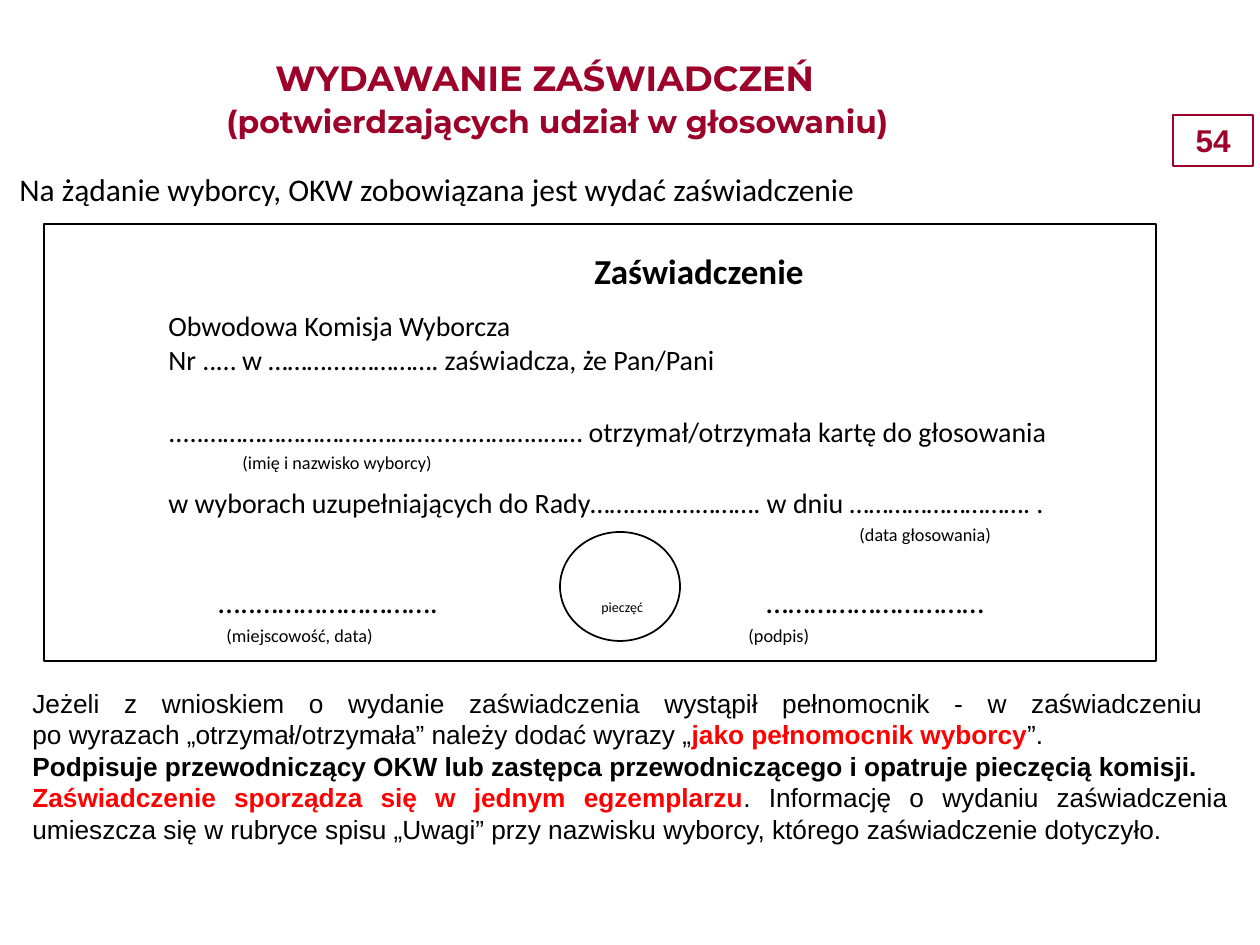
from pptx import Presentation
from pptx.dml.color import RGBColor
from pptx.enum.shapes import MSO_SHAPE
from pptx.enum.text import PP_ALIGN
from pptx.util import Emu, Pt

MAROON, RED, BLACK, WHITE = "9D032A", "FF0000", "000000", "FFFFFF"

NUMBER = [{"runs": [("54", 18, MAROON, True)], "align": PP_ALIGN.CENTER}]
TITLE = [
    {"runs": [("WYDAWANIE ZAŚWIADCZEŃ", 20, MAROON, True)], "indent": 119},
    {"runs": [("(potwierdzających udział w głosowaniu)", 18, MAROON, True)],
     "indent": 70, "before": 2},
]
INTRO = [{"runs": [("Na żądanie wyborcy, OKW zobowiązana jest wydać zaświadczenie", 18, BLACK, False)],
          "indent": 7}]
FORM = [
    {"runs": [("Zaświadczenie", 20, BLACK, True)], "indent": 538},
    {"runs": [("Obwodowa Komisja Wyborcza\nNr ..… w ………....…………. zaświadcza, że Pan/Pani", 16, BLACK, False)],
     "indent": 112, "before": 10},
    {"runs": [(".....……………………..………......………..…… otrzymał/otrzymała kartę do głosowania", 16, BLACK, False)],
     "indent": 112, "before": 22},
    {"runs": [("(imię i nazwisko wyborcy)", 18, BLACK, False)], "indent": 186, "raised": True},
    {"runs": [("w wyborach uzupełniających do Rady……..……..………. w dniu ………………………. .", 16, BLACK, False)],
     "indent": 112},
    {"runs": [("(data głosowania)", 18, BLACK, False)], "indent": 803, "raised": True},
]
SIGNATURES = [
    ("…..…………………….", 18, False, (206, 576, 260, 51)),
    ("pieczęć", 8, False, (589, 593, 80, 30)),
    ("…………………………", 18, False, (754, 576, 260, 51)),
    ("(miejscowość, data)", 18, True, (214, 614, 260, 51)),
    ("(podpis)", 18, True, (736, 614, 260, 51)),
]
RULES = [
    {"runs": [("Jeżeli z wnioskiem o wydanie zaświadczenia wystąpił pełnomocnik - w zaświadczeniu \n"
               "po wyrazach „otrzymał/otrzymała” należy dodać wyrazy „", 15, BLACK, False),
              ("jako pełnomocnik wyborcy", 15, RED, True), ("”.", 15, BLACK, False)],
     "align": PP_ALIGN.JUSTIFY},
    {"runs": [("Podpisuje przewodniczący OKW lub zastępca przewodniczącego i opatruje pieczęcią komisji.",
               15, BLACK, True)], "align": PP_ALIGN.JUSTIFY},
    {"runs": [("Zaświadczenie sporządza się w jednym egzemplarzu", 15, RED, True),
              (". Informację o wydaniu zaświadczenia umieszcza się w rubryce spisu „Uwagi” "
               "przy nazwisku wyborcy, którego zaświadczenie dotyczyło.", 15, BLACK, False)],
     "align": PP_ALIGN.JUSTIFY},
]


def px(n):
    return Emu(round(n * 914400 / 126))


def color(value):
    return RGBColor.from_string(value)


def add_outline(s, kind, box, line, width, fill=None):
    sp = s.shapes.add_shape(kind, *map(px, box))
    sp.shadow.inherit = False
    if fill:
        sp.fill.solid()
        sp.fill.fore_color.rgb = color(fill)
    else:
        sp.fill.background()
    sp.line.color.rgb = color(line)
    sp.line.width = Pt(width)
    return sp


def add_textbox(s, box):
    return s.shapes.add_textbox(*map(px, box))


def write(sp, paragraphs, font, top=6):
    tf = sp.text_frame
    tf.word_wrap = True
    tf.margin_top = px(top)
    tf.vertical_anchor = 1
    for i, item in enumerate(paragraphs):
        p = tf.paragraphs[0] if i == 0 else tf.add_paragraph()
        p.alignment = item.get("align", PP_ALIGN.LEFT)
        if "before" in item:
            p.space_before = Pt(item["before"])
        pPr = p._p.get_or_add_pPr()
        pPr.set("marL", str(px(item.get("indent", 0))))
        pPr.set("indent", "0")
        for text, size, ink, bold in item["runs"]:
            for j, part in enumerate(text.split("\n")):
                if j:
                    p.add_line_break()
                r = p.add_run()
                r.text = part
                r.font.name = font
                r.font.size = Pt(size)
                r.font.bold = bold
                r.font.color.rgb = color(ink)
                if item.get("raised"):
                    r.font._element.set("baseline", "30000")


prs = Presentation()
prs.slide_width, prs.slide_height = px(1260), px(945)
s = prs.slides.add_slide(prs.slide_layouts[6])

number = add_outline(s, MSO_SHAPE.RECTANGLE, (1173, 115, 80, 51), MAROON, 0.75)
write(number, NUMBER, "Arial")
write(add_textbox(s, (144, 50, 1160, 97)), TITLE, "Montserrat")
add_outline(s, MSO_SHAPE.OVAL, (560, 532, 120, 109), BLACK, 1, WHITE)
write(add_textbox(s, (0, 164, 1260, 51)), INTRO, "Calibri")
write(add_textbox(s, (20, 681, 1220, 171)), RULES, "Arial")
form = add_outline(s, MSO_SHAPE.RECTANGLE, (44, 224, 1112, 437), BLACK, 1.5)
write(form, FORM, "Calibri", top=25)
for text, size, raised, box in SIGNATURES:
    write(add_textbox(s, box), [{"runs": [(text, size, BLACK, False)], "raised": raised}], "Calibri")

prs.save("out.pptx")
